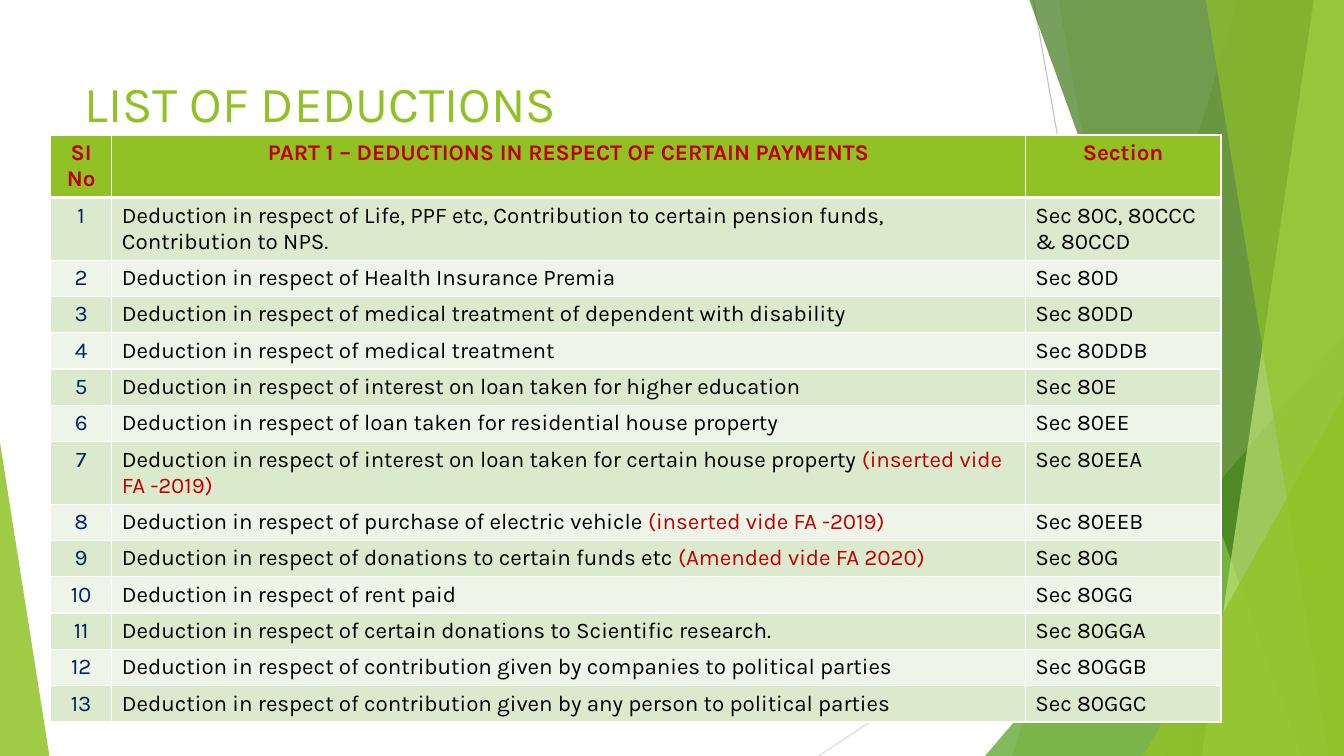
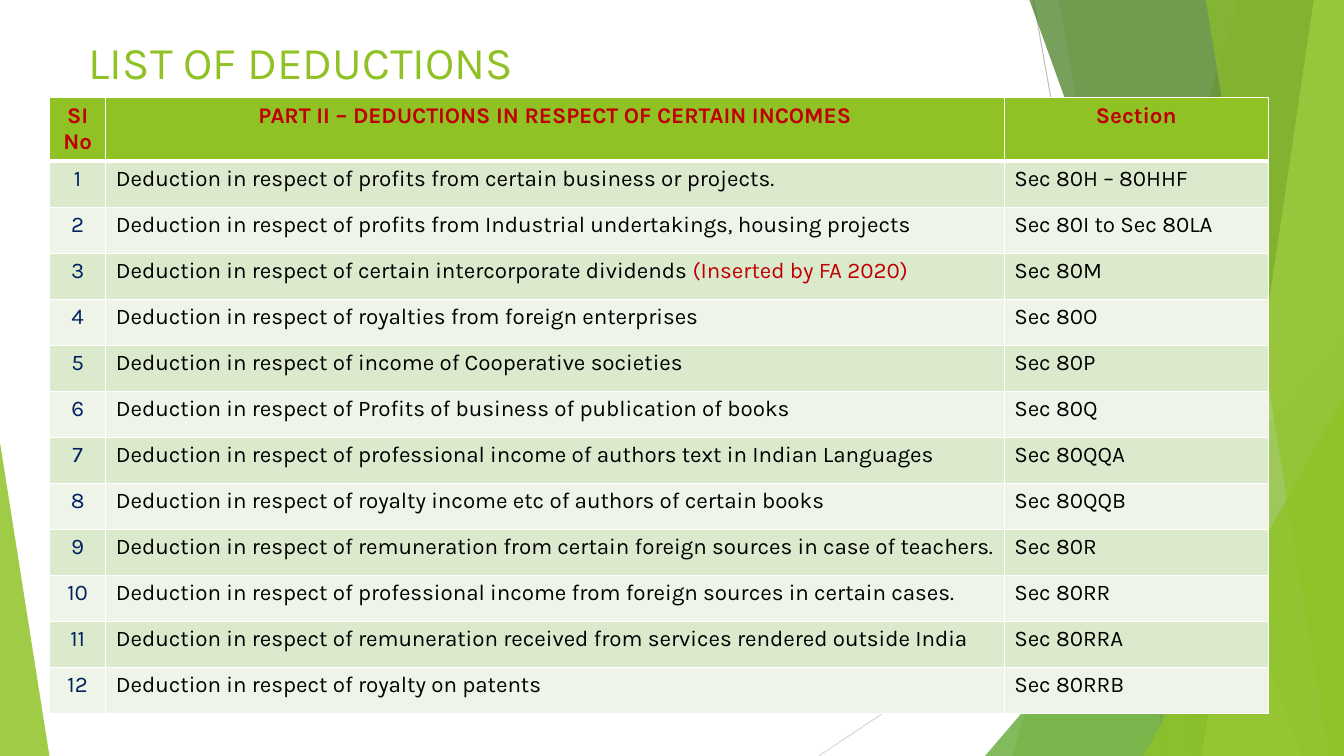
from dataclasses import dataclass

from lxml import etree
from pptx import Presentation
from pptx.dml.color import RGBColor as RGB
from pptx.enum.shapes import MSO_CONNECTOR as CONN, MSO_SHAPE as SHAPE
from pptx.enum.text import MSO_ANCHOR as ANCHOR, MSO_AUTO_SIZE as AUTO, PP_ALIGN as ALIGN
from pptx.oxml.ns import qn
from pptx.util import Inches, Pt


# Theme
@dataclass(frozen=True)
class Theme:
    font: str = "Karla"
    body_size: float = 16
    green: str = "90C226"
    mid_green: str = "54A021"
    dark_green: str = "3F7819"
    lime: str = "C0E474"
    band_odd: str = "DBE9CD"
    band_even: str = "EEF4E8"
    red: str = "C00000"
    navy: str = "002060"
    black: str = "000000"
    white: str = "FFFFFF"
    ray: str = "BFBFBF"
    pale_ray: str = "D9D9D9"
    grid_pt: float = 1
    header_rule_pt: float = 3


T = Theme()
SLIDE_W, SLIDE_H = 13.33, 7.5


# Repeated elements
@dataclass(frozen=True)
class Ray:
    start: tuple[float, float]
    end: tuple[float, float]
    color: str


@dataclass(frozen=True)
class Band:
    """Facet running from the top edge to the bottom edge, flush right."""
    top_x: float
    bottom_x: float
    color: str
    alpha: int


@dataclass(frozen=True)
class Corner:
    """Right triangle standing on the bottom edge."""
    left: float
    top: float
    width: float
    apex: float
    color: str
    alpha: int


@dataclass(frozen=True)
class Deduction:
    text: str
    section: str
    note: str = ""


@dataclass(frozen=True)
class DeductionSlide:
    title_box: tuple[float, float, float, float]
    title_size: float
    table_at: tuple[float, float]
    height: float
    cols: tuple[float, float, float]
    header_height: float
    heading: str
    deductions: tuple[Deduction, ...]
    two_line_rows: tuple[int, ...] = ()


RAYS = (
    Ray((10.25, 0), (11.58, SLIDE_H), T.ray),
    Ray((SLIDE_W, 4.03), (8.12, SLIDE_H), T.pale_ray),
)
FACETS = (
    Band(12.28, 10.04, T.green, 30),
    Band(10.5, 11.83, T.green, 20),
    Corner(9.77, 3.33, 3.56, 1, T.mid_green, 72),
    Band(10.21, 12.91, T.dark_green, 70),
    Band(13.03, 11.92, T.lime, 70),
    Band(11.96, 13.18, T.green, 65),
    Corner(11.34, 3.93, 1.99, 1, T.green, 80),
    Corner(0, 4.39, 0.49, 0, T.green, 85),
)

SLIDES = (
    DeductionSlide(
        title_box=(0.74, 0.67, 9.52, 0.91), title_size=36,
        table_at=(0.5, 1.34), height=5.82, cols=(0.61, 9.06, 1.94),
        header_height=0.62, two_line_rows=(1, 7),
        heading="PART 1 – DEDUCTIONS IN RESPECT OF CERTAIN PAYMENTS",
        deductions=(
            Deduction("Life, PPF etc, Contribution to certain pension funds, "
                      "Contribution to NPS.", "80C, 80CCC & 80CCD"),
            Deduction("Health Insurance Premia", "80D"),
            Deduction("medical treatment of dependent with disability", "80DD"),
            Deduction("medical treatment", "80DDB"),
            Deduction("interest on loan taken for higher education", "80E"),
            Deduction("loan taken for residential house property", "80EE"),
            Deduction("interest on loan taken for certain house property", "80EEA",
                      "(inserted vide FA -2019)"),
            Deduction("purchase of electric vehicle", "80EEB", "(inserted vide FA -2019)"),
            Deduction("donations to certain funds etc", "80G", "(Amended vide FA 2020)"),
            Deduction("rent paid", "80GG"),
            Deduction("certain donations to Scientific research.", "80GGA"),
            Deduction("contribution given by companies to political parties", "80GGB"),
            Deduction("contribution given by any person to political parties", "80GGC"),
        ),
    ),
    DeductionSlide(
        title_box=(0.78, 0.29, 9.4, 0.69), title_size=32.4,
        table_at=(0.49, 0.97), height=6.11, cols=(0.56, 8.91, 2.62),
        header_height=0.63,
        heading="PART II – DEDUCTIONS IN RESPECT OF CERTAIN INCOMES",
        deductions=(
            Deduction("profits from certain business or projects.", "80H – 80HHF"),
            Deduction("profits from Industrial undertakings, housing projects",
                      "80I to Sec 80LA"),
            Deduction("certain intercorporate dividends", "80M", "(Inserted by FA 2020)"),
            Deduction("royalties from foreign enterprises", "80O"),
            Deduction("income of Cooperative societies", "80P"),
            Deduction("Profits of business of publication of books", "80Q"),
            Deduction("professional income of authors text in Indian Languages", "80QQA"),
            Deduction("royalty income etc of authors of certain books", "80QQB"),
            Deduction("remuneration from certain foreign sources in case of teachers.",
                      "80R"),
            Deduction("professional income from foreign sources in certain cases.",
                      "80RR"),
            Deduction("remuneration received from services rendered outside India",
                      "80RRA"),
            Deduction("royalty on patents", "80RRB"),
        ),
    ),
)


# Formatting helpers
def paint(sp, color: str, alpha: int) -> None:
    sp.shadow.inherit = False
    sp.line.fill.background()
    sp.fill.solid()
    sp.fill.fore_color.rgb = RGB.from_string(color)
    clr = sp.element.spPr.find(qn("a:solidFill")).find(qn("a:srgbClr"))
    etree.SubElement(clr, qn("a:alpha"), val=str(alpha * 1000))


def add_run(p, text: str, size: float, color: str, bold: bool = False) -> None:
    r = p.add_run()
    r.text = text
    r.font.name = T.font
    r.font.size = Pt(size)
    r.font.bold = bold
    r.font.color.rgb = RGB.from_string(color)


def style_cell(cell, fill: str, top_pt: float, bottom_pt: float) -> None:
    tc_pr = cell._tc.get_or_add_tcPr()
    widths = {"lnL": T.grid_pt, "lnR": T.grid_pt, "lnT": top_pt, "lnB": bottom_pt}
    for tag, width in widths.items():
        ln = etree.SubElement(tc_pr, qn(f"a:{tag}"), w=str(Pt(width)))
        solid = etree.SubElement(ln, qn("a:solidFill"))
        etree.SubElement(solid, qn("a:srgbClr"), val=T.white)
    cell.fill.solid()
    cell.fill.fore_color.rgb = RGB.from_string(fill)


# Shared backdrop, kept on the layout
def add_ray(shapes, ray: Ray) -> None:
    cx = shapes.add_connector(CONN.STRAIGHT, *map(Inches, ray.start + ray.end))
    cx.line.color.rgb = RGB.from_string(ray.color)
    cx.line.width = Pt(0.75)
    etree.SubElement(cx.element.spPr, qn("a:effectLst"))


def add_facet(shapes, facet: Band | Corner) -> None:
    if isinstance(facet, Band):
        fb = shapes.build_freeform(Inches(facet.top_x), 0)
        corners = ((SLIDE_W, 0), (SLIDE_W, SLIDE_H), (facet.bottom_x, SLIDE_H))
        fb.add_line_segments([(Inches(x), Inches(y)) for x, y in corners], close=True)
        sp = fb.convert_to_shape()
    else:
        sp = shapes.add_shape(SHAPE.ISOSCELES_TRIANGLE, Inches(facet.left),
                              Inches(facet.top), Inches(facet.width),
                              Inches(SLIDE_H - facet.top))
        sp.adjustments[0] = facet.apex
    paint(sp, facet.color, facet.alpha)


def add_backdrop(s, layout) -> None:
    group = s.shapes.add_group_shape()
    for ray in RAYS:
        add_ray(group.shapes, ray)
    for facet in FACETS:
        add_facet(group.shapes, facet)
    # Moving the group to the layout shows it behind every slide
    layout.element.cSld.spTree.insert(2, group.element)


# Slide parts
def add_title(s, box: tuple[float, float, float, float], size: float) -> None:
    sp = s.shapes.title
    sp.left, sp.top, sp.width, sp.height = map(Inches, box)
    tf = sp.text_frame
    tf.word_wrap = True
    tf.auto_size = AUTO.NONE
    tf.vertical_anchor = ANCHOR.TOP
    p = tf.paragraphs[0]
    p.alignment = ALIGN.LEFT
    add_run(p, "LIST OF DEDUCTIONS", size, T.green)


def add_deduction_table(s, d: DeductionSlide) -> None:
    count = len(d.deductions)
    tall = len(d.two_line_rows)
    row_height = (d.height - d.header_height * (1 + tall)) / (count - tall)
    frame = s.shapes.add_table(count + 1, len(d.cols), *map(Inches, d.table_at),
                               Inches(sum(d.cols)), Inches(d.height))
    table = frame.table
    for col, width in zip(table.columns, d.cols):
        col.width = Inches(width)
    for i, row in enumerate(table.rows):
        is_tall = i == 0 or i in d.two_line_rows
        row.height = Inches(d.header_height if is_tall else row_height)

    # Header row
    for cell, label in zip(table.rows[0].cells, ("SI No", d.heading, "Section")):
        style_cell(cell, T.green, T.grid_pt, T.header_rule_pt)
        p = cell.text_frame.paragraphs[0]
        p.alignment = ALIGN.CENTER
        add_run(p, label, T.body_size, T.red, bold=True)

    # Banded body rows
    for i, item in enumerate(d.deductions, start=1):
        cells = list(table.rows[i].cells)
        for cell in cells:
            style_cell(cell, T.band_odd if i % 2 else T.band_even,
                       T.header_rule_pt if i == 1 else T.grid_pt, T.grid_pt)
        number, text, section = (c.text_frame.paragraphs[0] for c in cells)
        number.alignment = ALIGN.CENTER
        add_run(number, str(i), T.body_size, T.navy)
        gap = " " if item.note else ""
        add_run(text, f"Deduction in respect of {item.text}{gap}", T.body_size, T.black)
        if item.note:
            add_run(text, item.note, T.body_size, T.red)
        add_run(section, f"Sec {item.section}", T.body_size, T.black)


def main() -> None:
    prs = Presentation()
    prs.slide_width, prs.slide_height = Inches(SLIDE_W), Inches(SLIDE_H)
    layout = prs.slide_layouts[5]
    for i, d in enumerate(SLIDES):
        s = prs.slides.add_slide(layout)
        if i == 0:
            add_backdrop(s, layout)
        add_title(s, d.title_box, d.title_size)
        add_deduction_table(s, d)
    prs.save("out.pptx")


if __name__ == "__main__":
    main()
